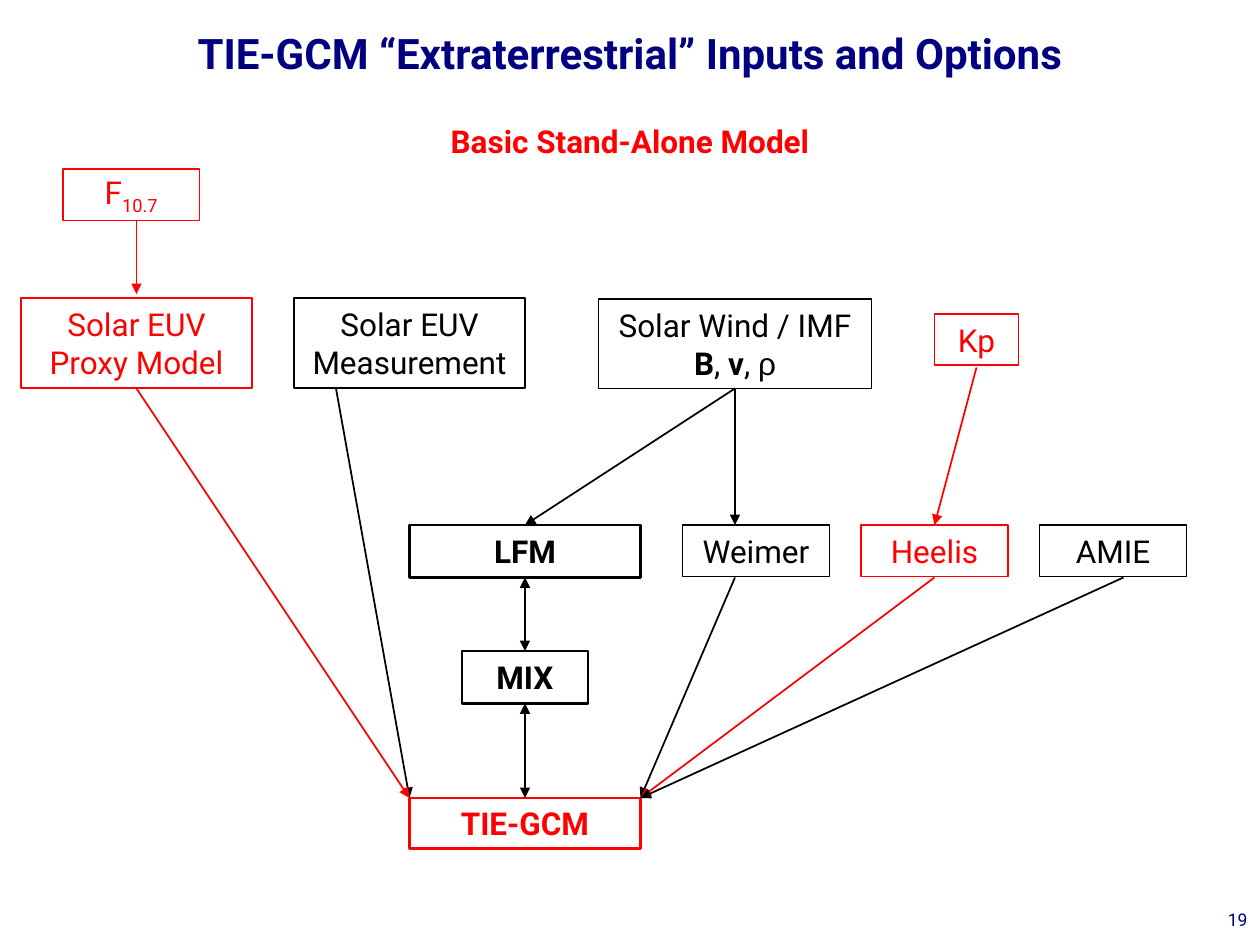
import pptx
import pptx.util
import pptx.dml.color
import pptx.enum.shapes
import pptx.enum.text
import pptx.oxml.ns
from lxml import etree

RED = pptx.dml.color.RGBColor(0xFF, 0x00, 0x00)
BLACK = pptx.dml.color.RGBColor(0x00, 0x00, 0x00)
NAVY = pptx.dml.color.RGBColor(0x00, 0x00, 0x80)
ALIGN = pptx.enum.text.PP_ALIGN
ANCHOR = pptx.enum.text.MSO_ANCHOR
CELLS_PER_INCH = 12

BOLD = {"bold": True}
SOLAR_WIND = [("Solar Wind / IMF ", {}), ("B", BOLD), (", ", {}), ("v", BOLD),
              (", ", {}), ("ρ", {"font": "Arial"})]
F107 = [("F", {}), ("10.7", {"baseline": -25000})]

BOXES = [
    (F107, 6, 16.1, 13, 4.9, RED, False),
    ("Solar EUV Proxy Model", 2, 28.4, 22, 8.6, RED, False),
    ("Solar EUV Measurement", 28, 28.4, 22, 8.6, BLACK, False),
    (SOLAR_WIND, 57, 28.5, 26, 8.5, BLACK, False),
    ("Kp", 89, 29.9, 8, 4.9, RED, False),
    ("LFM", 39, 50, 22, 5, BLACK, True),
    ("Weimer", 65, 50, 14, 4.9, BLACK, False),
    ("Heelis", 82, 50, 14, 4.9, RED, False),
    ("AMIE", 99, 50, 14, 4.9, BLACK, False),
    ("MIX", 44, 62, 12, 5, BLACK, True),
    ("TIE-GCM", 39, 76, 22, 4.8, RED, True),
]
ARROWS = [
    (13, 21, 13, 28, RED, False),
    (32, 37, 39, 76, BLACK, False),
    (13, 37, 39, 76, RED, False),
    (70, 37, 50, 50, BLACK, False),
    (70, 37, 70, 50, BLACK, False),
    (93, 35, 89, 50, RED, False),
    (70, 55, 61, 76, BLACK, False),
    (89, 55, 61, 76, RED, False),
    (107, 55, 61, 76, BLACK, False),
    (50, 55, 50, 62, BLACK, True),
    (50, 67, 50, 76, BLACK, True),
]


def grid(*cells):
    return [pptx.util.Inches(c / CELLS_PER_INCH) for c in cells]


def write(tf, text, size=18, color=BLACK, bold=False, font="Roboto",
          align=ALIGN.CENTER, anchor=ANCHOR.MIDDLE):
    tf.word_wrap = True
    tf.auto_size = pptx.enum.text.MSO_AUTO_SIZE.NONE
    tf.vertical_anchor = anchor
    p = tf.paragraphs[0]
    p.alignment = align
    for part, changes in [(text, {})] if isinstance(text, str) else text:
        r = p.add_run()
        r.text = part
        r.font.name = changes.get("font", font)
        r.font.size = pptx.util.Pt(size)
        r.font.bold = changes.get("bold", bold)
        r.font.color.rgb = color
        if "baseline" in changes:
            r._r.get_or_add_rPr().set("baseline", str(changes["baseline"]))


def add_box(s, text, col, row, cols, rows, color, bold):
    sp = s.shapes.add_shape(pptx.enum.shapes.MSO_SHAPE.RECTANGLE,
                            *grid(col, row, cols, rows))
    sp.shadow.inherit = False
    sp.fill.background()
    sp.line.color.rgb = color
    sp.line.width = pptx.util.Pt(1.5 if bold else 1)
    write(sp.text_frame, text, color=color, bold=bold)


def add_arrow(s, col1, row1, col2, row2, color, double):
    cn = s.shapes.add_connector(pptx.enum.shapes.MSO_CONNECTOR.STRAIGHT,
                                *grid(col1, row1, col2, row2))
    cn.line.color.rgb = color
    cn.line.width = pptx.util.Pt(1)
    ln = cn.line._get_or_add_ln()
    for end in ("a:headEnd", "a:tailEnd") if double else ("a:tailEnd",):
        etree.SubElement(ln, pptx.oxml.ns.qn(end), type="triangle")
    etree.SubElement(cn._element.spPr, pptx.oxml.ns.qn("a:effectLst"))


def add_label(s, text, col, row, cols, rows, **fmt):
    sp = s.shapes.add_textbox(*grid(col, row, cols, rows))
    write(sp.text_frame, text, **fmt)


def set_title(s, text):
    sp = s.shapes.title
    sp.left, sp.top, sp.width, sp.height = grid(0, 2, 120, 6)
    write(sp.text_frame, text, size=24, color=NAVY, bold=True)


def main():
    prs = pptx.Presentation()
    prs.slide_width, prs.slide_height = grid(120, 90)
    s = prs.slides.add_slide(prs.slide_layouts[5])
    set_title(s, "TIE-GCM “Extraterrestrial” Inputs and Options")
    for box in BOXES:
        add_box(s, *box)
    for arrow in ARROWS:
        add_arrow(s, *arrow)
    add_label(s, "Basic Stand-Alone Model", 25.5, 11, 69, 4.8, color=RED, bold=True)
    add_label(s, "19", 95, 86, 25, 4, size=10, color=NAVY,
              align=ALIGN.RIGHT, anchor=ANCHOR.TOP)
    prs.save("out.pptx")


if __name__ == "__main__":
    main()
